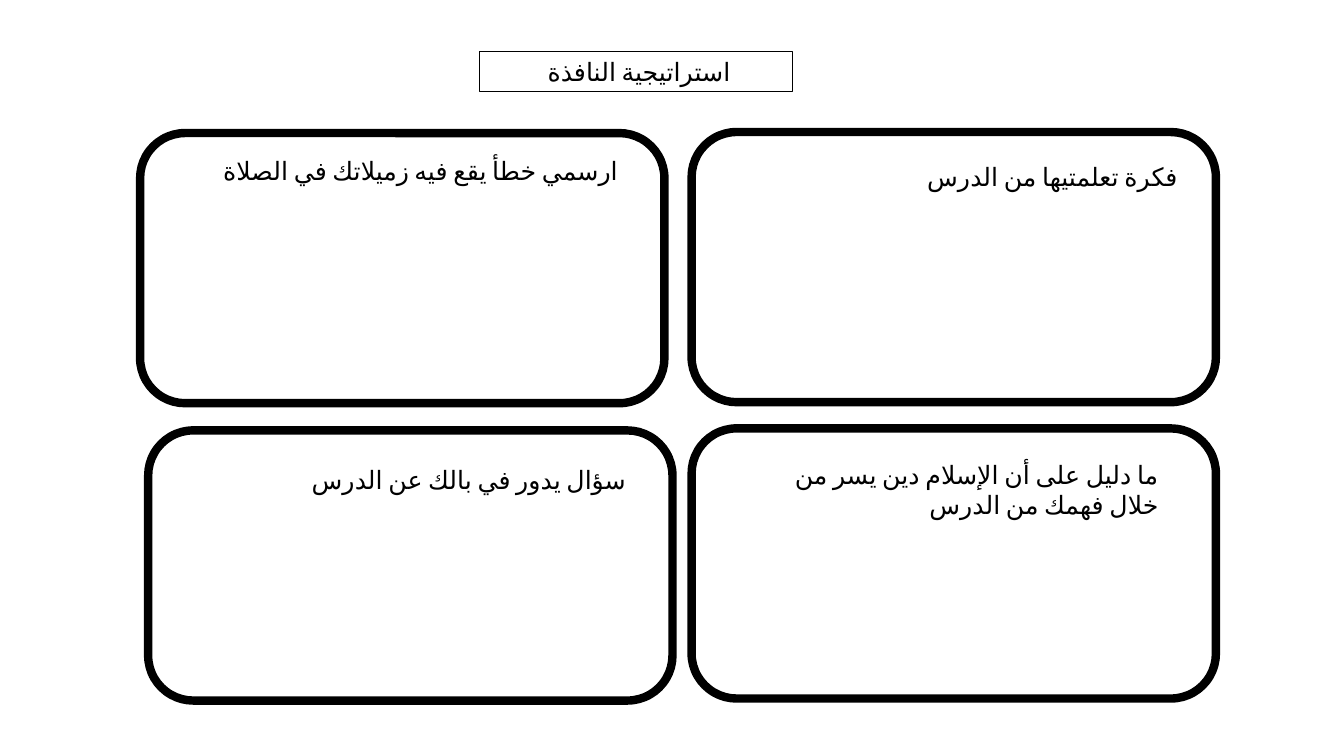
from lxml import etree
from pptx import Presentation
from pptx import util as u
from pptx.dml.color import RGBColor
from pptx.enum import shapes, text
from pptx.oxml import ns

# Content: wording and place (left, top, width, height in inches)
INK = "000000"
FONT = "Calibri"
TITLE = ("استراتيجية النافذة ", (4.76, 0.51, 3.1, 0.4))
PANE_SIZE = (5.2, 2.68)
PANES = [(6.86, 1.31), (1.39, 1.32), (6.86, 4.25), (1.47, 4.27)]
PROMPTS = [
    ("فكرة تعلمتيها من الدرس ", (8.85, 1.55, 2.93, 0.4)),
    ("ارسمي خطأ يقع فيه زميلاتك في الصلاة ", (1.91, 1.49, 4.32, 0.4)),
    ("سؤال يدور في بالك عن الدرس", (2.76, 4.56, 3.55, 0.41)),
    ("ما دليل على أن الإسلام دين يسر من خلال فهمك من الدرس ",
     (7.25, 4.51, 4.34, 0.71)),
]


def color(value):
    return RGBColor.from_string(value)


def inches(values):
    return [u.Inches(value) for value in values]


def add_outline(page, kind, place, weight):
    box = page.shapes.add_shape(kind, *inches(place))
    box.shadow.inherit = False
    box.fill.background()
    box.line.color.rgb = color(INK)
    box.line.width = u.Pt(weight)
    return box


def write(box, wording, align):
    frame = box.text_frame
    frame.word_wrap = True
    frame.auto_size = text.MSO_AUTO_SIZE.SHAPE_TO_FIT_TEXT
    para = frame.paragraphs[0]
    para.alignment = align
    para._p.get_or_add_pPr().set("rtl", "1")  # right-to-left reading
    span = para.add_run()
    span.text = wording
    span.font.size = u.Pt(18)
    span.font.name = FONT
    span.font.color.rgb = color(INK)
    # Arabic language and complex-script font
    props = span._r.get_or_add_rPr()
    props.set("lang", "ar-SA")
    etree.SubElement(props, ns.qn("a:cs")).set("typeface", FONT)


def main():
    deck = Presentation()
    deck.slide_width, deck.slide_height = inches((13.33, 7.5))
    page = deck.slides.add_slide(deck.slide_layouts[6])

    # Title
    wording, place = TITLE
    title = add_outline(page, shapes.MSO_SHAPE.RECTANGLE, place, 0.75)
    write(title, wording, text.PP_ALIGN.CENTER)

    # Window panes
    for corner in PANES:
        add_outline(page, shapes.MSO_SHAPE.ROUNDED_RECTANGLE,
                    corner + PANE_SIZE, 6)

    # Prompts
    for wording, place in PROMPTS:
        box = page.shapes.add_textbox(*inches(place))
        write(box, wording, text.PP_ALIGN.RIGHT)

    deck.save("out.pptx")


if __name__ == "__main__":
    main()
